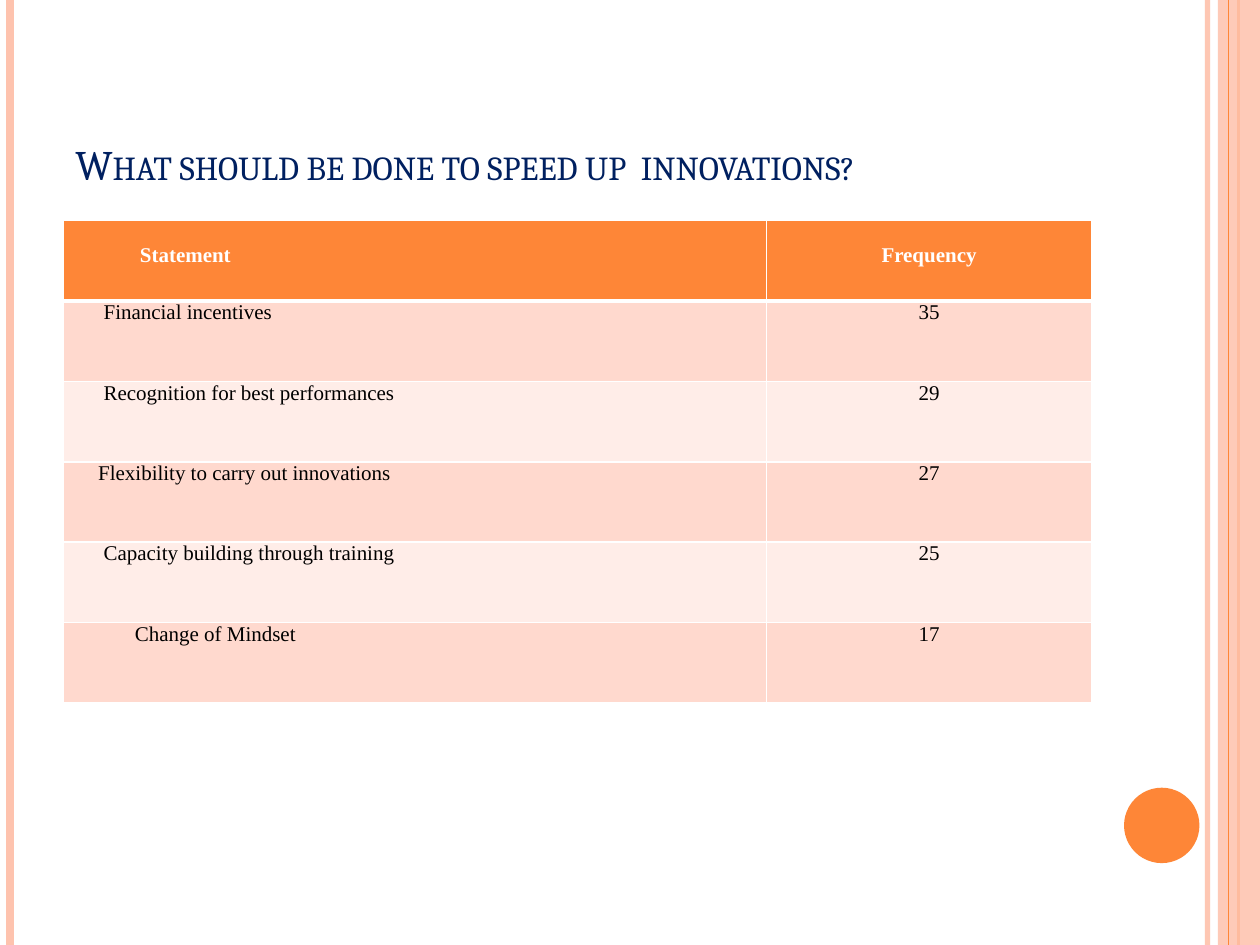
from lxml.etree import SubElement
from pptx import Presentation
from pptx.dml.color import RGBColor
from pptx.enum.shapes import MSO_CONNECTOR, MSO_SHAPE
from pptx.enum.text import MSO_ANCHOR, PP_ALIGN
from pptx.oxml.ns import qn
from pptx.util import Cm, Pt

COLORS = {
    "orange": "FE8637", "peach": "FEC3AE", "navy": "002060",
    "white": "FFFFFF", "black": "000000",
    "band_dark": "FFD9CE", "band_light": "FFEDE8",
}
HEIGHT = 19.05
ROW_HEIGHT = 1.62
ROWS = [
    ("Statement", "Frequency", 1.37),
    ("Financial incentives", "35", 0.64),
    ("Recognition for best performances", "29", 0.64),
    ("Flexibility to carry out innovations", "27", 0.53),
    ("Capacity building through training", "25", 0.64),
    ("Change of Mindset", "17", 1.27),
]


def rgb(name):
    """Return the named palette colour."""
    return RGBColor.from_string(COLORS[name])


def set_alpha(solid_fill, percent):
    """Make a solid fill element partly transparent."""
    SubElement(solid_fill[0], qn("a:alpha"), val=str(percent * 1000))


def add_stripe(s, x, color, width, alpha=100):
    """Draw a full-height vertical line."""
    line = s.shapes.add_connector(
        MSO_CONNECTOR.STRAIGHT, Cm(x), 0, Cm(x), Cm(HEIGHT))
    line.line.color.rgb = rgb(color)
    line.line.width = Pt(width)
    sp_pr = line._element.spPr
    if alpha < 100:
        set_alpha(sp_pr.find(".//" + qn("a:solidFill")), alpha)
    SubElement(sp_pr, qn("a:effectLst"))


def add_block(s, kind, left, top, width, height, color, alpha=100):
    """Draw a filled shape without outline."""
    sp = s.shapes.add_shape(kind, Cm(left), Cm(top), Cm(width), Cm(height))
    sp.shadow.inherit = False
    sp.fill.solid()
    sp.fill.fore_color.rgb = rgb(color)
    sp.line.fill.background()
    if alpha < 100:
        set_alpha(sp._element.spPr.find(qn("a:solidFill")), alpha)


def style_run(r, font, size, color, bold=False):
    """Set the font of a run."""
    r.font.name = font
    r.font.size = Pt(size)
    r.font.bold = bold
    r.font.color.rgb = rgb(color)


def add_title(s, text):
    """Add the small-caps title."""
    sp = s.shapes.add_textbox(Cm(1.27), Cm(1.9), Cm(20.75), Cm(2.04))
    tf = sp.text_frame
    tf.word_wrap = True
    tf.vertical_anchor = MSO_ANCHOR.BOTTOM
    tf.text = text
    r = tf.paragraphs[0].runs[0]
    style_run(r, "Cambria", 24, "navy")
    r.font._element.set("cap", "small")


def set_borders(cell, top, bottom):
    """Give a cell white borders."""
    tc_pr = cell._tc.get_or_add_tcPr()
    for side, width in (("L", 1), ("R", 1), ("T", top), ("B", bottom)):
        ln = SubElement(tc_pr, qn(f"a:ln{side}"), w=str(Pt(width)))
        fill = SubElement(ln, qn("a:solidFill"))
        SubElement(fill, qn("a:srgbClr"), val=COLORS["white"])


def fill_cell(cell, text, row, indent=None):
    """Write and style one cell, centred when it has no indent."""
    header = row == 0
    set_borders(cell, 3 if row == 1 else 1, 3 if header else 1)
    cell.fill.solid()
    band = "band_dark" if row % 2 else "band_light"
    cell.fill.fore_color.rgb = rgb("orange" if header else band)
    cell.margin_left = cell.margin_right = Cm(0.18)
    cell.margin_top = cell.margin_bottom = 0
    cell.text_frame.text = text
    p = cell.text_frame.paragraphs[0]
    if header:
        p.line_spacing = 2.0
    if indent is None:
        p.alignment = PP_ALIGN.CENTER
    else:
        p._p.get_or_add_pPr().set("marL", str(Cm(indent)))
    style_run(p.runs[0], "Times New Roman", 12,
              "white" if header else "black", header)


def add_frequency_table(s):
    """Add the table of statements and frequencies."""
    table = s.shapes.add_table(
        len(ROWS), 2, Cm(1.27), Cm(4.45), Cm(20.74),
        Cm(ROW_HEIGHT * len(ROWS))).table
    table.columns[0].width = Cm(14.18)
    table.columns[1].width = Cm(6.56)
    for i, (statement, frequency, indent) in enumerate(ROWS):
        table.rows[i].height = Cm(ROW_HEIGHT)
        fill_cell(table.cell(i, 0), statement, i, indent)
        fill_cell(table.cell(i, 1), frequency, i)


def main():
    """Build and save the slide."""
    prs = Presentation()
    prs.slide_width, prs.slide_height = Cm(25.4), Cm(HEIGHT)
    s = prs.slides.add_slide(prs.slide_layouts[6])
    add_stripe(s, 24.34, "peach", 3, 93)
    add_stripe(s, 0.21, "peach", 4.5)
    add_stripe(s, 24.97, "orange", 1.5)
    add_block(s, MSO_SHAPE.RECTANGLE, 24.55, 0, 0.85, HEIGHT, "peach", 87)
    add_stripe(s, 24.76, "orange", 0.75)
    add_block(s, MSO_SHAPE.OVAL, 22.66, 15.88, 1.52, 1.52, "orange")
    add_title(s, "What should be done to speed up  innovations?")
    add_frequency_table(s)
    prs.save("out.pptx")


if __name__ == "__main__":
    main()
